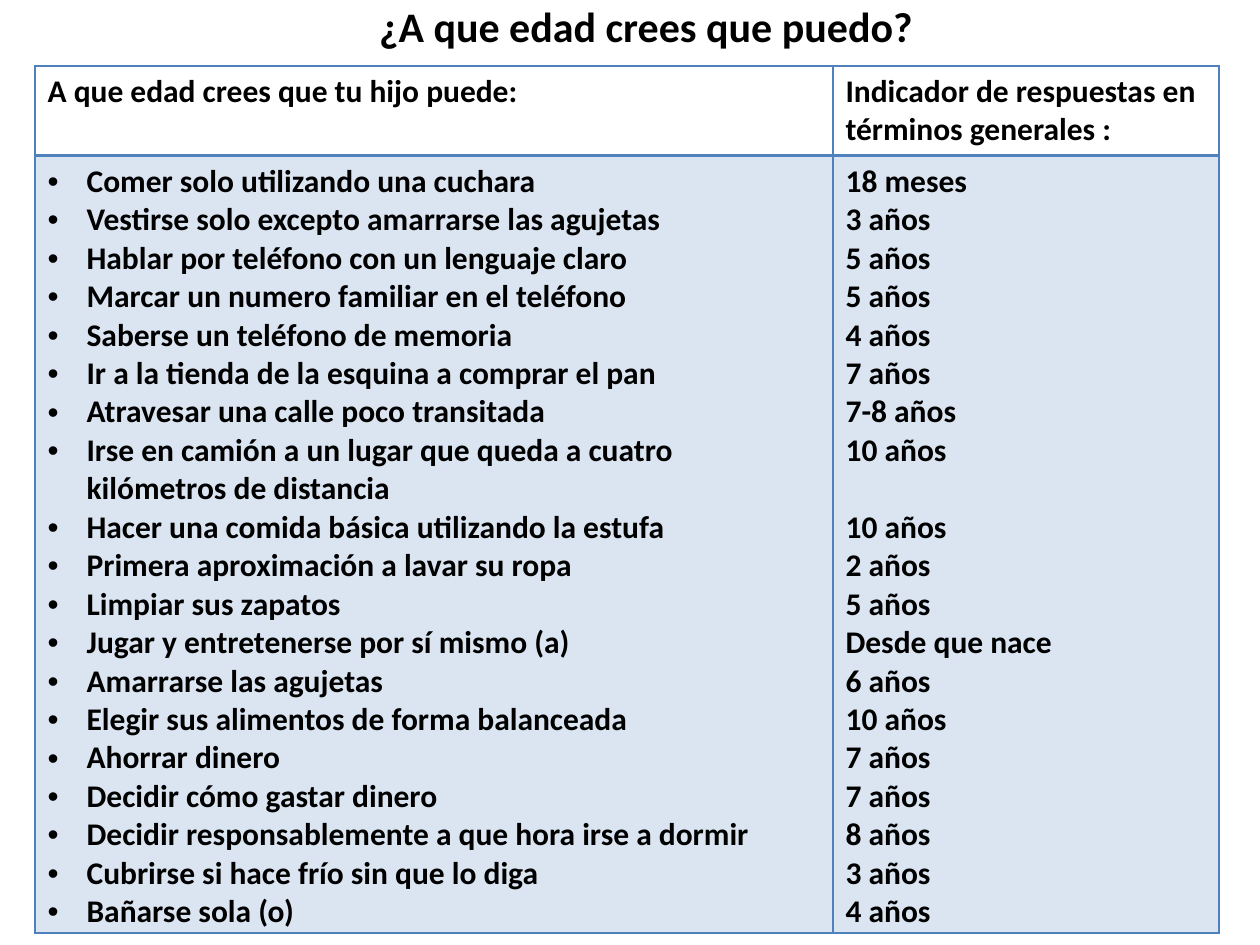
"""Build a slide with a table of children's abilities and their usual ages."""
from lxml import etree
from pptx import Presentation
from pptx.dml.color import RGBColor
from pptx.enum.text import MSO_ANCHOR, PP_ALIGN
from pptx.oxml.ns import qn
from pptx.util import Pt

CENTER, LEFT = PP_ALIGN.CENTER, PP_ALIGN.LEFT
MIDDLE = MSO_ANCHOR.MIDDLE
PX = 914400 / 126
COLORS = {"text": "000000", "accent": "4F81BD"}
FONT = "Calibri"
LINE_PT = 22
BULLET_INDENT = 39

abilities = [
    ("Comer solo utilizando una cuchara", "18 meses", 1),
    ("Vestirse solo excepto amarrarse las agujetas", "3 años", 1),
    ("Hablar por teléfono con un lenguaje claro", "5 años", 1),
    ("Marcar un numero familiar en el teléfono", "5 años", 1),
    ("Saberse un teléfono de memoria", "4 años", 1),
    ("Ir a la tienda de la esquina a comprar el pan", "7 años", 1),
    ("Atravesar una calle poco transitada", "7-8 años", 1),
    ("Irse en camión a un lugar que queda a cuatro kilómetros de distancia", "10 años", 2),
    ("Hacer una comida básica utilizando la estufa", "10 años", 1),
    ("Primera aproximación a lavar su ropa", "2 años", 1),
    ("Limpiar sus zapatos", "5 años", 1),
    ("Jugar y entretenerse por sí mismo (a)", "Desde que nace", 1),
    ("Amarrarse las agujetas", "6 años", 1),
    ("Elegir sus alimentos de forma balanceada", "10 años", 1),
    ("Ahorrar dinero", "7 años", 1),
    ("Decidir cómo gastar dinero", "7 años", 1),
    ("Decidir responsablemente a que hora irse a dormir", "8 años", 1),
    ("Cubrirse si hace frío sin que lo diga", "3 años", 1),
    ("Bañarse sola (o)", "4 años", 1),
]


def px(length):
    return round(length * PX)


def write(frame, text, size=18, align=LEFT, bullet=False, first=True, gap=0):
    paragraph = frame.paragraphs[0] if first else frame.add_paragraph()
    paragraph.alignment = align
    paragraph.space_after = Pt(gap)
    if bullet:
        properties = paragraph._p.get_or_add_pPr()
        properties.set("marL", str(px(BULLET_INDENT)))
        properties.set("indent", str(-px(BULLET_INDENT)))
        etree.SubElement(properties, qn("a:buFont"), typeface="Arial")
        etree.SubElement(properties, qn("a:buChar"), char="•")
    run = paragraph.add_run()
    run.text = text
    run.font.name = FONT
    run.font.size = Pt(size)
    run.font.bold = True
    run.font.color.rgb = RGBColor.from_string(COLORS["text"])


prs = Presentation()
prs.slide_width, prs.slide_height = px(1260), px(945)
slide = prs.slides.add_slide(prs.slide_layouts[6])

title = slide.shapes.add_textbox(px(353), px(-53), px(586), px(158)).text_frame
title.word_wrap = True
title.vertical_anchor = MIDDLE
write(title, "¿A que edad crees que puedo?", size=24, align=CENTER)

ages = slide.shapes.add_table(2, 2, px(35), px(66), px(1184), px(867)).table
ages.first_row = False
ages.horz_banding = False
for column, width in zip(ages.columns, (798, 386)):
    column.width = px(width)
for row, height in zip(ages.rows, (90, 777)):
    row.height = px(height)

for row_index in range(2):
    for cell in ages.rows[row_index].cells:
        cell_properties = cell._tc.get_or_add_tcPr()
        for side in "LRTB":
            divider = (row_index, side) in ((0, "B"), (1, "T"))
            border = etree.SubElement(
                cell_properties, qn(f"a:ln{side}"), w=str(Pt(2 if divider else 1)))
            line_fill = etree.SubElement(border, qn("a:solidFill"))
            etree.SubElement(line_fill, qn("a:srgbClr"), val=COLORS["accent"])
        if row_index == 0:
            cell.fill.background()
        else:
            cell.fill.solid()
            cell.fill.fore_color.rgb = RGBColor.from_string(COLORS["accent"])
            tint = cell_properties.find(f"{qn('a:solidFill')}/{qn('a:srgbClr')}")
            etree.SubElement(tint, qn("a:alpha"), val="20000")

write(ages.cell(0, 0).text_frame, "A que edad crees que tu hijo puede:")
write(ages.cell(0, 1).text_frame, "Indicador de respuestas en términos generales :")
ability_frame = ages.cell(1, 0).text_frame
age_frame = ages.cell(1, 1).text_frame
for index, (ability, age, lines) in enumerate(abilities):
    write(ability_frame, ability, bullet=True, first=index == 0)
    write(age_frame, age, first=index == 0, gap=LINE_PT * (lines - 1))

prs.save("out.pptx")
